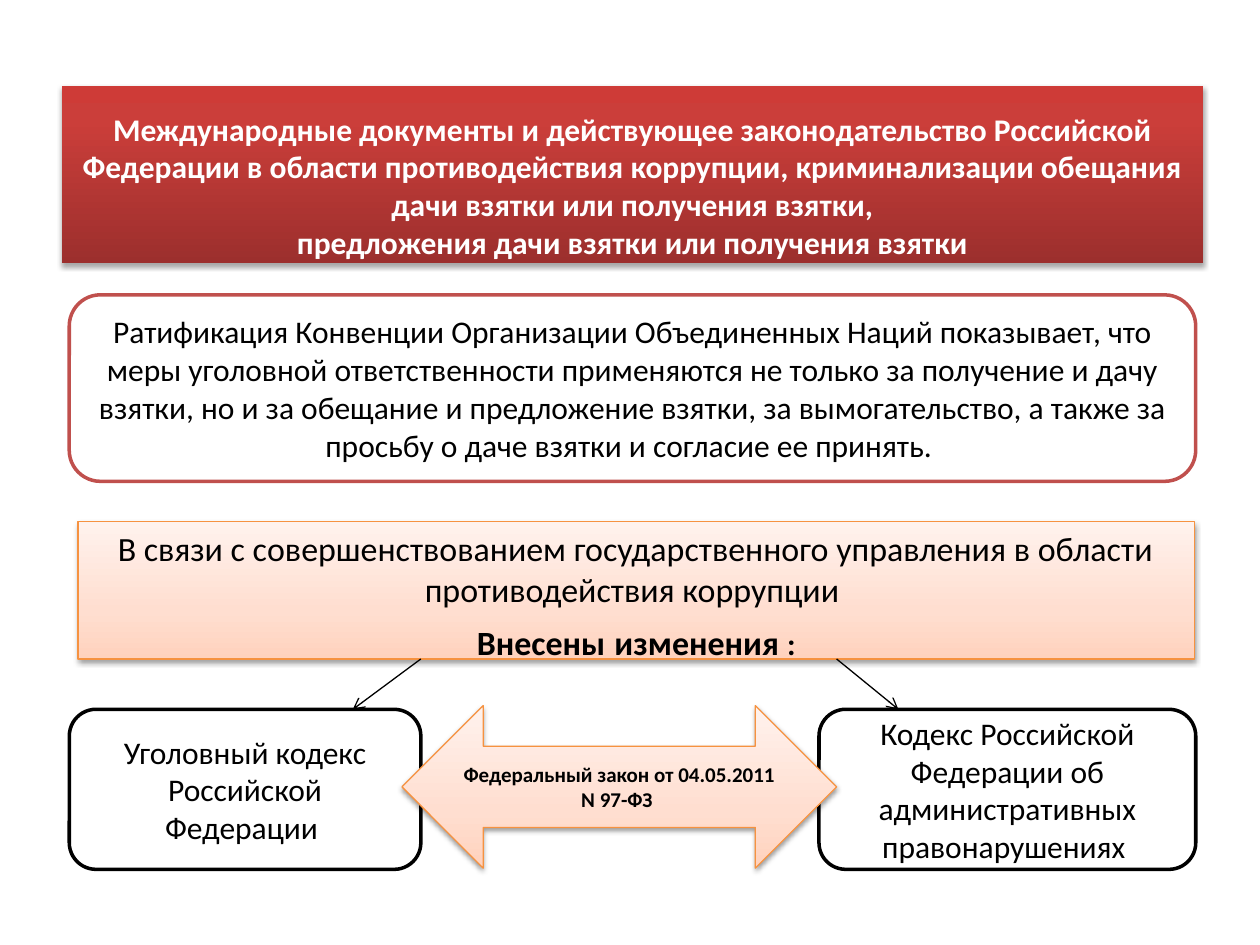
from lxml.etree import SubElement
from pptx import Presentation
from pptx.dml.color import RGBColor
from pptx.enum.shapes import MSO_CONNECTOR as Connector, MSO_SHAPE as Shape
from pptx.enum.text import MSO_ANCHOR as Anchor, PP_ALIGN as Align
from pptx.oxml.ns import qn
from pptx.util import Inches, Pt

FONT = "Calibri"
BLACK, WHITE, RED, ORANGE = "000000", "FFFFFF", "C0504D", "F69240"
RED_GRADIENT = [(0, "9C2F2D"), (80, "CB3E3A"), (100, "CE3B37")]
PEACH_GRADIENT = [(0, "FFD2BD"), (35, "FFDED0"), (100, "FFF2ED")]

LEFT, RIGHT = 0.55, 9.49
LEFT_CODE_END, RIGHT_CODE_START = 3.34, 6.5
CHANGES_TOP, CHANGES_BOTTOM = 4.14, 5.23
CODES_TOP, CODES_BOTTOM = 5.63, 6.9
ARROW_LEFT, ARROW_RIGHT = 3.19, 6.64

TITLE = [[("Международные документы и действующее законодательство Российской Федерации "
           "в области противодействия коррупции, криминализации обещания дачи взятки "
           "или получения взятки,\vпредложения дачи взятки или получения взятки", 18, True)]]
CONVENTION = [[("Ратификация Конвенции Организации Объединенных Наций показывает, что меры "
                "уголовной ответственности применяются не только за получение и дачу взятки, "
                "но и за обещание и предложение взятки, за вымогательство, а также за просьбу "
                "о даче взятки и согласие ее принять. ", 18, False)]]
CHANGES = [
    [("В связи с совершенствованием государственного управления в области "
      "противодействия коррупции ", 19.4, False)],
    [("Внесены", 19.4, True), (" ", 22.2, True), ("изменения ", 19.4, True), (":", 17.6, True)],
]
CRIMINAL_CODE = [[("Уголовный кодекс Российской Федерации ", 18, False)]]
OFFENCES_CODE = [[("Кодекс Российской Федерации об административных правонарушениях ", 18, False)]]
FEDERAL_LAW = [[("Федеральный закон от 04.05.2011 N 97-ФЗ ", 12, True)]]

BLOCKS = [
    dict(kind=Shape.RECTANGLE, edges=(0.49, 0.68, 9.55, 2.09), text=TITLE, color=WHITE,
         fill=RED_GRADIENT, shadow=(35, 1.8), anchor=Anchor.BOTTOM, bottom_inset=0.02),
    dict(kind=Shape.RECTANGLE, edges=(0.62, CHANGES_TOP, 9.48, CHANGES_BOTTOM), text=CHANGES,
         fill=PEACH_GRADIENT, line=(ORANGE, 0.75), shadow=(38, 1.6), anchor=Anchor.TOP,
         space_before=4),
    dict(kind=Shape.ROUNDED_RECTANGLE, edges=(LEFT, 2.34, RIGHT, 3.82), text=CONVENTION,
         line=(RED, 2)),
    dict(kind=Shape.ROUNDED_RECTANGLE, edges=(LEFT, CODES_TOP, LEFT_CODE_END, CODES_BOTTOM),
         text=CRIMINAL_CODE, line=(BLACK, 2)),
    dict(kind=Shape.ROUNDED_RECTANGLE, edges=(RIGHT_CODE_START, CODES_TOP, RIGHT, CODES_BOTTOM),
         text=OFFENCES_CODE, line=(BLACK, 2)),
    dict(kind=Shape.LEFT_RIGHT_ARROW, edges=(ARROW_LEFT, 5.6, ARROW_RIGHT, 6.89),
         text=FEDERAL_LAW, fill=PEACH_GRADIENT, line=(ORANGE, 0.75), shadow=(38, 1.6)),
]
POINTERS = [(LEFT_CODE_END, 2.8), (ARROW_RIGHT, 7.13)]


def rgb(value):
    return RGBColor.from_string(value)


def fill_gradient(shape, stops):
    shape.fill.gradient()
    shape.fill.gradient_angle = 90
    stop_list = shape._element.spPr.find(qn("a:gradFill")).find(qn("a:gsLst"))
    for stop in list(stop_list):
        stop_list.remove(stop)
    for position, color in stops:
        stop = SubElement(stop_list, qn("a:gs"), pos=str(position * 1000))
        SubElement(stop, qn("a:srgbClr"), val=color)


def add_shadow(shape, opacity, distance):
    effects = shape._element.spPr.find(qn("a:effectLst"))
    shadow = SubElement(effects, qn("a:outerShdw"), blurRad=str(Pt(3.1)),
                        dist=str(Pt(distance)), dir="5400000", rotWithShape="0")
    color = SubElement(shadow, qn("a:srgbClr"), val=BLACK)
    SubElement(color, qn("a:alpha"), val=str(opacity * 1000))


def write_text(frame, paragraphs, color, space_before):
    frame.word_wrap = True
    for index, runs in enumerate(paragraphs):
        paragraph = frame.add_paragraph() if index else frame.paragraphs[0]
        paragraph.alignment = Align.CENTER
        if index:
            paragraph.space_before = Pt(space_before)
        for text, size, bold in runs:
            for part_index, part in enumerate(text.split("\v")):
                if part_index:
                    paragraph.add_line_break()
                run = paragraph.add_run()
                run.text = part
                run.font.name = FONT
                run.font.size = Pt(size)
                run.font.bold = bold
                run.font.color.rgb = rgb(color)


def add_block(slide, kind, edges, text, color=BLACK, fill=None, line=None, shadow=None,
              anchor=Anchor.MIDDLE, space_before=0, bottom_inset=0.05):
    left, top, right, bottom = edges
    shape = slide.shapes.add_shape(kind, Inches(left), Inches(top),
                                   Inches(right - left), Inches(bottom - top))
    shape.shadow.inherit = False
    if fill:
        fill_gradient(shape, fill)
    else:
        shape.fill.solid()
        shape.fill.fore_color.rgb = rgb(WHITE)
    if line:
        shape.line.color.rgb = rgb(line[0])
        shape.line.width = Pt(line[1])
    else:
        shape.line.fill.background()
    if shadow:
        add_shadow(shape, *shadow)
    shape.text_frame.vertical_anchor = anchor
    shape.text_frame.margin_bottom = Inches(bottom_inset)
    write_text(shape.text_frame, text, color, space_before)


def add_pointer(slide, start, end):
    connector = slide.shapes.add_connector(
        Connector.STRAIGHT, Inches(start), Inches(CHANGES_BOTTOM), Inches(end), Inches(CODES_TOP))
    connector.line.color.rgb = rgb(BLACK)
    connector.line.width = Pt(0.75)
    SubElement(connector.line._get_or_add_ln(), qn("a:tailEnd"), type="arrow")
    SubElement(connector._element.spPr, qn("a:effectLst"))


def main():
    presentation = Presentation()
    presentation.slide_width, presentation.slide_height = Inches(10), Inches(7.5)
    slide = presentation.slides.add_slide(presentation.slide_layouts[6])
    for block in BLOCKS:
        add_block(slide, **block)
    for start, end in POINTERS:
        add_pointer(slide, start, end)
    presentation.save("out.pptx")


if __name__ == "__main__":
    main()
